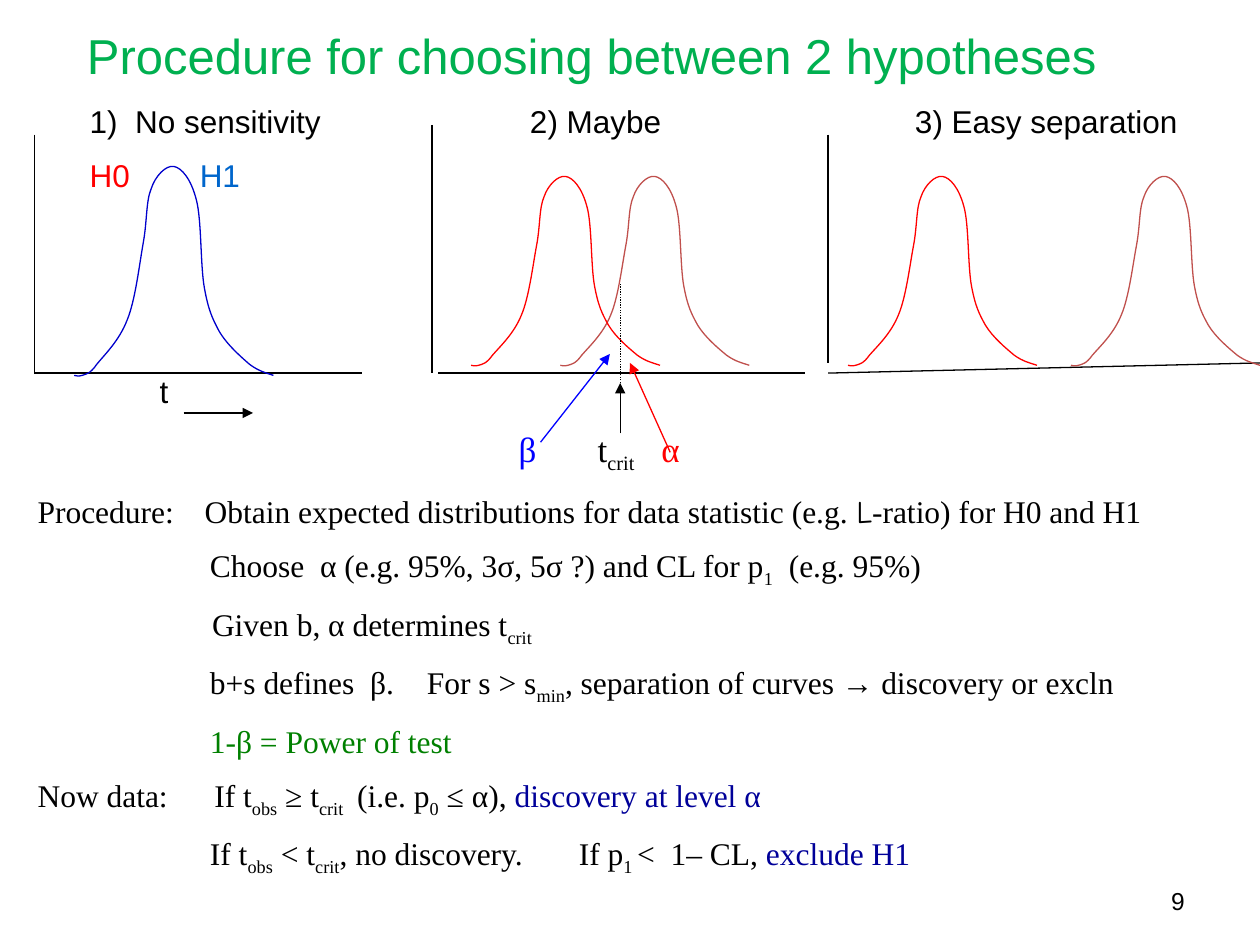
from dataclasses import dataclass

from lxml import etree
from pptx import Presentation
from pptx import util as u
from pptx.dml.color import RGBColor
from pptx.enum import dml, shapes, text
from pptx.oxml.ns import qn


@dataclass(frozen=True)
class Theme:
    black: str = "000000"
    red: str = "FF0000"
    blue: str = "0000FF"
    navy: str = "000099"
    curve_blue: str = "0000CC"
    curve_brown: str = "C0504D"
    label_blue: str = "0066CC"
    green: str = "008000"
    title_green: str = "00B050"
    sans: str = "Arial"
    serif: str = "Times New Roman"
    script: str = "Comic Neue"
    title_size: float = 28
    symbol_size: float = 20
    body_size: float = 18
    number_size: float = 14
    line_width: float = 0.75


THEME = Theme()

BELL_BOX = (150, 152)
BELL_POINTS = [
    (0, 151),
    (1, 151), (3, 152), (6, 151),
    (9, 150), (12, 150), (17, 143),
    (23, 136), (34, 126), (40, 111),
    (46, 97), (49, 72), (52, 56),
    (55, 40), (54, 26), (58, 17),
    (61, 8), (69, 0), (75, 1),
    (81, 2), (88, 10), (92, 25),
    (96, 39), (95, 72), (98, 88),
    (101, 104), (104, 110), (109, 119),
    (115, 129), (126, 138), (132, 143),
    (139, 148), (144, 149), (150, 151),
]


class SlideBuilder:
    """Draw styled elements on one slide, measured in points."""

    def __init__(self, slide, theme):
        self.slide, self.theme = slide, theme

    def style(self, run, color, size, font):
        run.font.size, run.font.name = u.Pt(size), font
        run.font.color.rgb = RGBColor.from_string(color)

    def title(self, words, box):
        shape = self.slide.shapes.title
        shape.left, shape.top, shape.width, shape.height = map(u.Pt, box)
        shape.text_frame.text = words
        shape.text_frame.vertical_anchor = text.MSO_ANCHOR.MIDDLE
        paragraph = shape.text_frame.paragraphs[0]
        paragraph.alignment = text.PP_ALIGN.LEFT
        self.style(paragraph.runs[0], self.theme.title_green,
                   self.theme.title_size, self.theme.sans)

    def text_box(self, box):
        text_frame = self.slide.shapes.add_textbox(*map(u.Pt, box)).text_frame
        text_frame.word_wrap = True
        return text_frame

    def slide_number(self, words, box):
        text_frame = self.text_box(box)
        text_frame.text = words
        text_frame.vertical_anchor = text.MSO_ANCHOR.MIDDLE
        paragraph = text_frame.paragraphs[0]
        paragraph.alignment = text.PP_ALIGN.RIGHT
        self.style(paragraph.runs[0], self.theme.black,
                   self.theme.number_size, self.theme.sans)

    def add_runs(self, paragraph, words, color, size, font):
        """Add runs; the parts between tildes become subscripts."""
        for index, part in enumerate(words.split("~")):
            if part:
                run = paragraph.add_run()
                run.text = part
                self.style(run, color, size, font)
                if index % 2:
                    run._r.get_or_add_rPr().set("baseline", "-25000")

    def tabbed_text(self, rows, box):
        text_frame = self.text_box(box)
        for index, (gap, stops, size, font, segments) in enumerate(rows):
            paragraph = text_frame.add_paragraph() if index else text_frame.paragraphs[0]
            paragraph.space_before = u.Pt(gap)
            tabs = etree.SubElement(paragraph._p.get_or_add_pPr(), qn("a:tabLst"))
            for stop in stops:
                etree.SubElement(tabs, qn("a:tab"), pos=str(u.Pt(stop)), algn="l")
            for words, color, *other_font in segments:
                self.add_runs(paragraph, words, color, size, *(other_font or [font]))

    def line(self, start, end, color=THEME.black, arrow=False, dotted=False):
        connector = self.slide.shapes.add_connector(
            shapes.MSO_CONNECTOR.STRAIGHT, *map(u.Pt, start + end))
        connector.line.width = u.Pt(self.theme.line_width)
        connector.line.color.rgb = RGBColor.from_string(color)
        if dotted:
            connector.line.dash_style = dml.MSO_LINE.ROUND_DOT
        if arrow:
            etree.SubElement(connector.line._get_or_add_ln(), qn("a:tailEnd"), type="triangle")
        etree.SubElement(connector._element.spPr, qn("a:effectLst"))

    def bell(self, left, top, color, width=108, height=109.4):
        """Draw a bell outline, each three points making one Bézier segment."""
        points = [(u.Pt(left + x * width / BELL_BOX[0]), u.Pt(top + y * height / BELL_BOX[1]))
                  for x, y in BELL_POINTS]
        builder = self.slide.shapes.build_freeform(*points[0])
        builder.add_line_segments(points[1:], close=False)
        shape = builder.convert_to_shape()
        outline = next(shape._element.iter(qn("a:path")))
        segments = outline.findall(qn("a:lnTo"))
        for first in range(0, len(segments), 3):
            curve = etree.SubElement(outline, qn("a:cubicBezTo"))
            for segment in segments[first:first + 3]:
                curve.append(segment[0])
                outline.remove(segment)
        shape.shadow.inherit = False
        shape.fill.background()
        shape.line.width = u.Pt(self.theme.line_width)
        shape.line.color.rgb = RGBColor.from_string(color)


def main():
    presentation = Presentation()
    presentation.slide_width, presentation.slide_height = u.Pt(720), u.Pt(540)
    slide = presentation.slides.add_slide(presentation.slide_layouts[5])
    theme = THEME
    black = theme.black
    builder = SlideBuilder(slide, theme)
    builder.slide_number("9", (516, 500.4, 168, 28.8))

    labels = (theme.body_size, theme.sans)
    symbols = (theme.symbol_size, theme.serif)
    body = (theme.body_size, theme.serif)
    rows = [
        (0, (29.8, 281.4, 501.4), *labels,
         [("\t1)  No sensitivity\t2) Maybe\t3) Easy separation", black)]),
        (9.5, (29.8, 92.7), *labels, [("\tH0\t", theme.red), ("H1", theme.label_blue)]),
        (101.5, (69.8,), *labels, [("\tt", black)]),
        (10, (274.9, 320.1, 356.4), *symbols,
         [("\tβ\t", theme.blue), ("t~crit~\t", black), ("α", theme.red)]),
        (10, (95.5,), *body,
         [("Procedure:\tObtain expected distributions for data statistic (e.g. ", black),
          ("L", black, theme.script), ("-ratio) for H0 and H1", black)]),
        (9, (98.5,), *body,
         [("\tChoose  α (e.g. 95%, 3σ, 5σ ?) and CL for p~1~  (e.g. 95%)", black)]),
        (9, (99.7,), *body, [("\tGiven b, α determines t~crit~", black)]),
        (9, (98.5, 222.5), *body,
         [("\tb+s defines  β.\tFor s > s~min~, separation of curves → discovery or excln",
           black)]),
        (9, (98.5,), *body, [("\t1-β = Power of test", theme.green)]),
        (9, (101,), *body,
         [("Now data:\tIf t~obs~ ≥ t~crit   ~(i.e. p~0~ ≤ α), ", black),
          ("discovery at level α", theme.navy)]),
        (9, (98.5, 309.3), *body,
         [("\tIf t~obs~ < t~crit~, no discovery.\tIf p~1 ~<  1– CL, ", black),
          ("exclude H1", theme.navy)]),
    ]
    builder.tabbed_text(rows, (14.4, 54.7, 692, 458))

    for start, end in [
        ((19.6, 77), (19.6, 213.2)), ((19.6, 213.2), (206.6, 213.2)),
        ((246.8, 71.3), (246.8, 213.2)), ((250.4, 213.2), (460, 213.2)),
        ((473.2, 77), (473.2, 207.4)), ((473.2, 213.2), (720, 207.4)),
    ]:
        builder.line(start, end)
    for left, color in [(320.2, theme.curve_brown), (269.2, theme.red),
                        (484.6, theme.red), (612, theme.curve_brown)]:
        builder.bell(left, 100.1, color)
    builder.bell(42.4, 94.3, theme.curve_blue, 113.8, 121)

    builder.line((354.4, 218.9), (354.4, 162), dotted=True)
    for start, end, color in [
        ((104.9, 236), (144.6, 236), black),
        ((354.4, 247.7), (354.4, 218.9), black),
        ((383, 258.5), (360, 207.4), theme.red),
        ((308.9, 252.7), (348.5, 202.3), theme.blue),
    ]:
        builder.line(start, end, color, arrow=True)
    builder.title("Procedure for choosing between 2 hypotheses", (42.5, 11, 618.5, 41))
    presentation.save("out.pptx")


if __name__ == "__main__":
    main()
